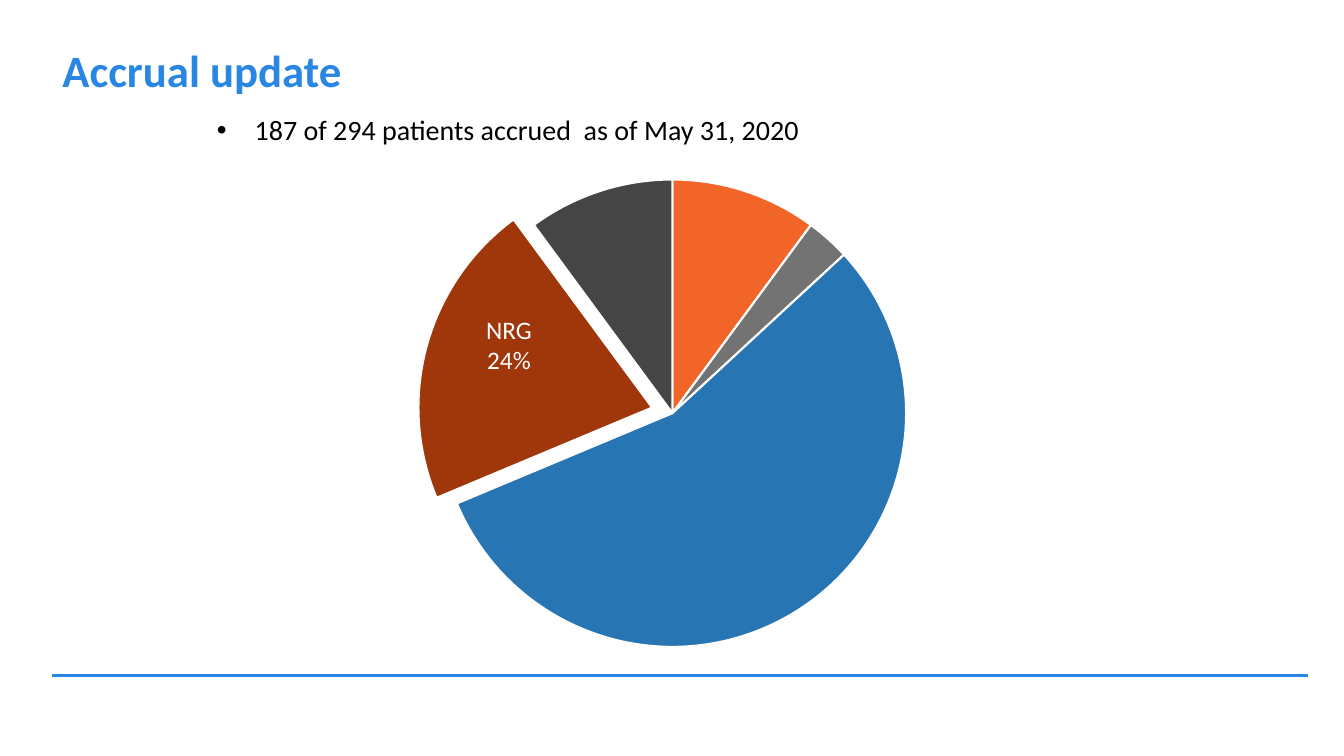
from lxml import etree
from pptx import Presentation
from pptx.chart.data import CategoryChartData
from pptx.dml.color import RGBColor
from pptx.enum.chart import XL_CHART_TYPE
from pptx.enum.shapes import MSO_CONNECTOR
from pptx.enum.text import MSO_ANCHOR, PP_ALIGN
from pptx.oxml import parse_xml
from pptx.oxml.ns import nsdecls, qn
from pptx.util import Pt

PIE = XL_CHART_TYPE.PIE
LINE = MSO_CONNECTOR.STRAIGHT
MIDDLE = MSO_ANCHOR.MIDDLE
LEFT, CENTER = PP_ALIGN.LEFT, PP_ALIGN.CENTER
BLUE = "2986E2"


def color(code):
    return RGBColor.from_string(code)


def style(font, size, code, bold=False):
    font.name = "Calibri"
    font.size = Pt(size)
    font.bold = bold
    font.color.rgb = color(code)


prs = Presentation()
prs.slide_width, prs.slide_height = Pt(960), Pt(540)
slide = prs.slides.add_slide(prs.slide_layouts[5])
shapes = slide.shapes

# Footer rule
rule = shapes.add_connector(LINE, Pt(37.4), Pt(482.4), Pt(934.6), Pt(482.4))
rule.line.color.rgb = color(BLUE)
rule.line.width = Pt(2.25)
etree.SubElement(rule._element.spPr, qn("a:effectLst"))

# Title
title = shapes.title
title.left, title.top, title.width, title.height = Pt(37.4), Pt(7.2), Pt(897.2), Pt(85)
title.text_frame.text = "Accrual update"
title.text_frame.vertical_anchor = MIDDLE
head = title.text_frame.paragraphs[0]
head.alignment = LEFT
style(head.font, 32, BLUE, True)

# Bullet line
body = shapes.add_textbox(Pt(147.8), Pt(77), Pt(673.2), Pt(407.5))
body.text_frame.word_wrap = True
item = body.text_frame.paragraphs[0]
item.text = "187 of 294 patients accrued  as of May 31, 2020"
props = item._p.get_or_add_pPr()
props.set("marL", str(Pt(27)))
props.set("indent", str(Pt(-27)))
etree.SubElement(props, qn("a:buFont"), typeface="Arial")
etree.SubElement(props, qn("a:buChar"), char="•")
style(item.font, 20, "000000")

# Pie of accrual by group; only the NRG slice is named
slices = [
    ("", 10, "F26529"),
    ("", 3, "737373"),
    ("", 55, "2875B4"),
    ("NRG", 21, "A0370A"),
    ("", 10, "454545"),
]
data = CategoryChartData()
data.categories = [name for name, _, _ in slices]
data.add_series("", [value for _, value, _ in slices])
frame = shapes.add_chart(PIE, Pt(182.2), Pt(100.8), Pt(596.2), Pt(432), data)
chart = frame.chart
chart.has_title = False
chart.has_legend = False
style(chart.font, 10, "000000")
plot = chart.plots[0]
plot.vary_by_categories = True
series = plot.series[0]
for index, (name, _, code) in enumerate(slices):
    form = series.points[index].format
    form.fill.solid()
    form.fill.fore_color.rgb = color(code)
    form.line.color.rgb = color("FFFFFF")
    form.line.width = Pt(1.5)
    if name:
        # Pull this slice out of the pie
        dot = series._element.findall(qn("c:dPt"))[index]
        burst = parse_xml(f'<c:explosion {nsdecls("c")} val="9"/>')
        dot.find(qn("c:spPr")).addprevious(burst)

# Fixed plot area
area = chart._chartSpace.chart.plotArea
old = area.find(qn("c:layout"))
if old is not None:
    area.remove(old)
sides = {"x": 0.22, "y": 0.06, "w": 0.56, "h": 0.78}
marks = "".join(f'<c:{side} val="{share}"/>' for side, share in sides.items())
area.insert(0, parse_xml(
    f'<c:layout {nsdecls("c")}><c:manualLayout><c:layoutTarget val="inner"/>'
    f'<c:xMode val="edge"/><c:yMode val="edge"/>{marks}</c:manualLayout></c:layout>'))

# Label on the NRG slice
label = shapes.add_textbox(Pt(337.7), Pt(221), Pt(51.8), Pt(51.1))
label.text_frame.word_wrap = False
label.text_frame.text = "NRG\n24%"
for line in label.text_frame.paragraphs:
    line.alignment = CENTER
    style(line.font, 18, "FFFFFF")

prs.save("out.pptx")
